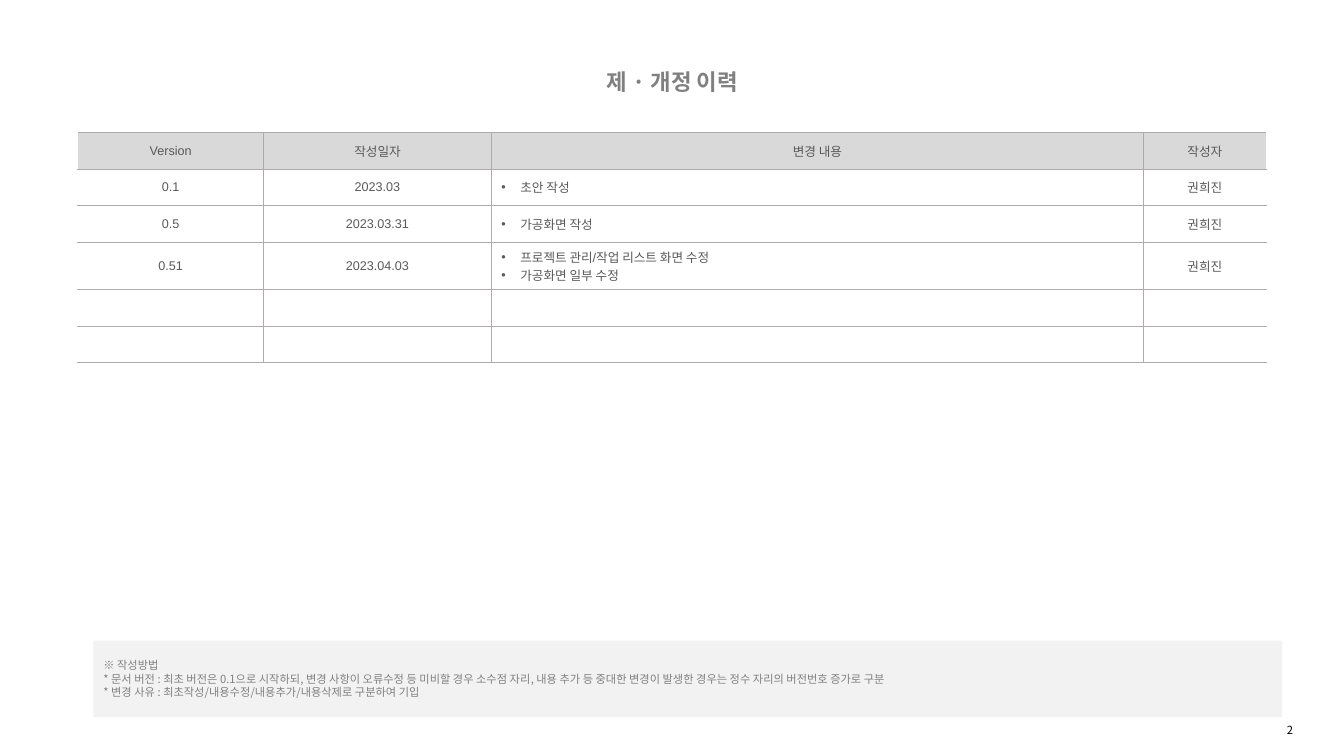
from lxml.etree import SubElement
from pptx import Presentation
from pptx.dml.color import RGBColor
from pptx.enum.shapes import MSO_SHAPE
from pptx.enum.text import MSO_ANCHOR, PP_ALIGN
from pptx.oxml.ns import qn
from pptx.util import Pt

PX = 9525
KOREAN = "Noto Sans CJK KR"
GRAY, RULE, WHITE = "808080", "AFABAB", "FFFFFF"
COLUMNS = [177, 217, 621, 117]
ROW_HEIGHT = 35
HISTORY = [
    ("Version", "작성일자", "변경 내용", "작성자"),
    ("0.1", "2023.03", "초안 작성", "권희진"),
    ("0.5", "2023.03.31", "가공화면 작성", "권희진"),
    ("0.51", "2023.04.03", "프로젝트 관리/작업 리스트 화면 수정\n가공화면 일부 수정", "권희진"),
    ("", "", "", ""),
    ("", "", "", ""),
]
GUIDE = [
    "※ 작성방법",
    "* 문서 버전 : 최초 버전은 0.1으로 시작하되, 변경 사항이 오류수정 등 미비할 경우 소수점 자리, "
    "내용 추가 등 중대한 변경이 발생한 경우는 정수 자리의 버전번호 증가로 구분",
    "* 변경 사유 : 최초작성/내용수정/내용추가/내용삭제로 구분하여 기입",
]


def color(value):
    """Turn a hex string into a colour."""
    return RGBColor.from_string(value)


def scale(box):
    """Turn a box in px into EMU."""
    return [length * PX for length in box]


def apply(target, values):
    """Set every attribute named in a dict of format values."""
    for name, value in values.items():
        setattr(target, name, value)


def write_line(para, text, font, hue, layout):
    """Fill one paragraph with one formatted span."""
    apply(para, layout)
    span = para.add_run()
    span.text = text
    apply(span.font, font)
    span.font.color.rgb = color(hue)
    SubElement(span.font._element, qn("a:ea"), typeface=KOREAN)


def write_lines(frame, lines, font, hue, layout):
    """Write each line as a paragraph of a text frame."""
    for index, text in enumerate(lines):
        para = frame.add_paragraph() if index else frame.paragraphs[0]
        write_line(para, text, font, hue, layout)


def add_bullet(para):
    """Give a paragraph a hanging bullet."""
    properties = para._p.get_or_add_pPr()
    properties.set("marL", str(18 * PX))
    properties.set("indent", str(-18 * PX))
    SubElement(properties, qn("a:buFont"), typeface="Arial")
    SubElement(properties, qn("a:buChar"), char="•")


def add_borders(cell, column):
    """Draw gray rules with white outer sides around a cell."""
    properties = cell._tc.get_or_add_tcPr()
    outer = {"L": column == 0, "R": column == len(COLUMNS) - 1}
    for index, side in enumerate("LRTB"):
        hue, width = (WHITE, 1) if outer.get(side) else (RULE, 0.5)
        line = SubElement(properties, qn(f"a:ln{side}"), w=str(Pt(width)))
        fill = SubElement(line, qn("a:solidFill"))
        SubElement(fill, qn("a:srgbClr"), val=hue)
        properties.insert(index, line)


def fill_cell(cell, text, row, column):
    """Format one cell of the history table."""
    cell.vertical_anchor = MSO_ANCHOR.MIDDLE
    cell.fill.solid()
    cell.fill.fore_color.rgb = color(WHITE if row else "D9D9D9")
    add_borders(cell, column)
    if not text:
        SubElement(cell.text_frame.paragraphs[0]._p, qn("a:endParaRPr"), sz="900")
        return
    bulleted = row > 0 and column == 2
    layout = {"alignment": PP_ALIGN.LEFT if bulleted else PP_ALIGN.CENTER}
    font = {"size": Pt(9), "name": "Arial", "bold": False}
    write_lines(cell.text_frame, text.split("\n"), font, "595959", layout)
    if bulleted:
        for para in cell.text_frame.paragraphs:
            add_bullet(para)


def add_history(page, left, top):
    """Place the revision table."""
    box = scale([left, top, sum(COLUMNS), ROW_HEIGHT * len(HISTORY)])
    table = page.shapes.add_table(len(HISTORY), len(COLUMNS), *box).table
    apply(table, {"first_row": False, "horz_banding": False})
    for column, width in zip(table.columns, COLUMNS):
        column.width = width * PX
    for row, texts in enumerate(HISTORY):
        table.rows[row].height = ROW_HEIGHT * PX
        for column, text in enumerate(texts):
            fill_cell(table.cell(row, column), text, row, column)


def add_label(page, box, text, font, hue, layout, frame_format):
    """Place a wrapping text box with one line of text."""
    frame = page.shapes.add_textbox(*scale(box)).text_frame
    apply(frame, {"word_wrap": True, **frame_format})
    write_lines(frame, [text], {"name": KOREAN, **font}, hue, layout)


def add_guide(page, box):
    """Place the shaded panel of writing rules."""
    panel = page.shapes.add_shape(MSO_SHAPE.RECTANGLE, *scale(box))
    panel.shadow.inherit = False
    panel.fill.solid()
    panel.fill.fore_color.rgb = color("F2F2F2")
    panel.line.fill.background()
    apply(panel.text_frame, {"word_wrap": True, "vertical_anchor": MSO_ANCHOR.MIDDLE})
    layout = {"alignment": PP_ALIGN.LEFT, "line_spacing": Pt(9.6)}
    write_lines(panel.text_frame, GUIDE, {"size": Pt(8), "name": KOREAN}, GRAY, layout)


def build_history_page(deck):
    """Build the revision history slide."""
    page = deck.slides.add_slide(deck.slide_layouts[6])
    add_history(page, 74, 126)
    add_label(page, (563, 60, 155, 36), "제 · 개정 이력", {"size": Pt(16), "bold": True}, GRAY,
              {"alignment": PP_ALIGN.CENTER, "line_spacing": Pt(19.3)},
              {"margin_left": 14 * PX, "margin_right": 14 * PX})
    add_guide(page, (89, 610, 1132, 73))
    add_label(page, (953, 686, 288, 19), "2", {"size": Pt(8)}, "000000",
              {"alignment": PP_ALIGN.RIGHT}, {"vertical_anchor": MSO_ANCHOR.MIDDLE})


def main():
    """Create and save the deck."""
    deck = Presentation()
    apply(deck, {"slide_width": 1280 * PX, "slide_height": 720 * PX})
    build_history_page(deck)
    deck.save("out.pptx")


if __name__ == "__main__":
    main()
